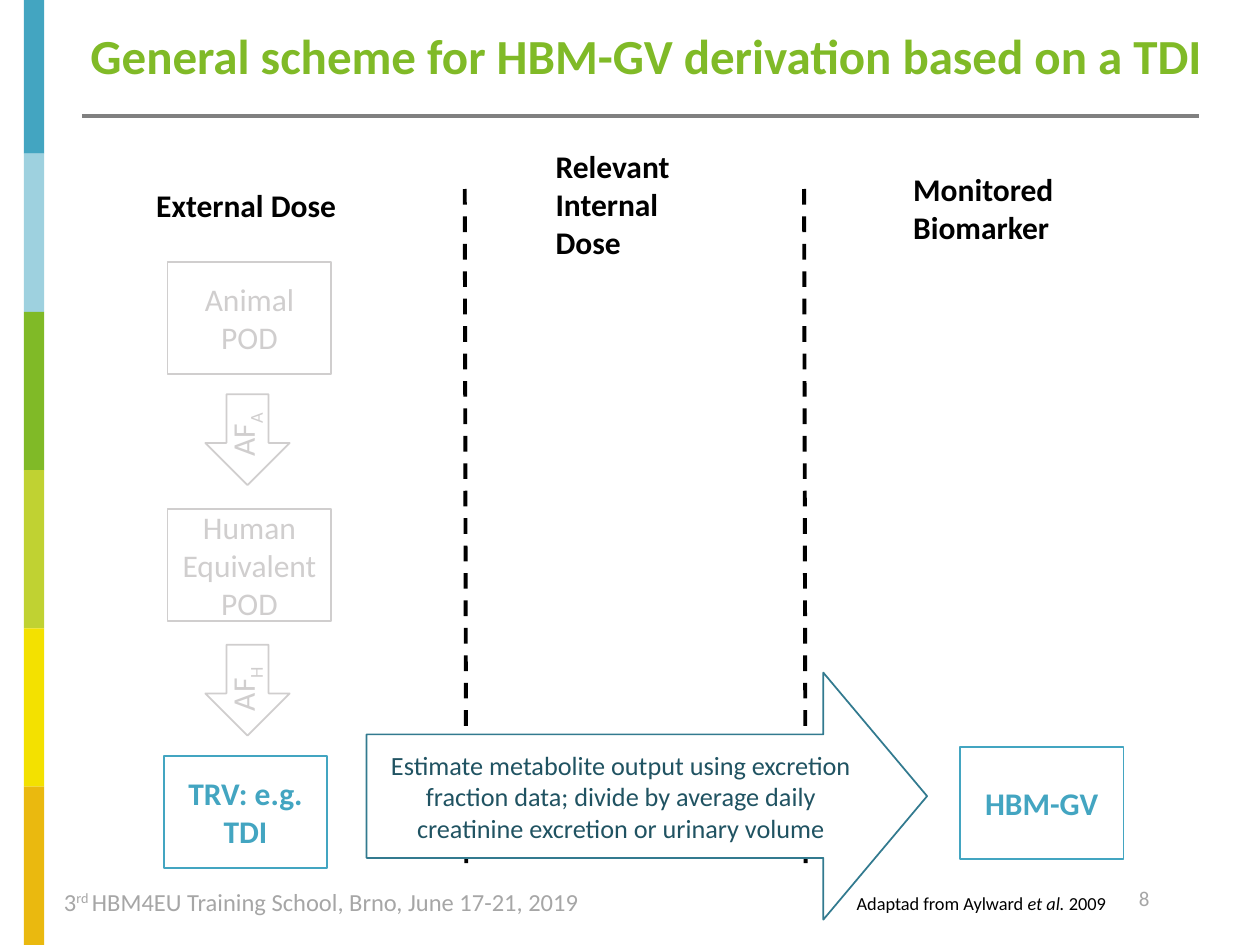
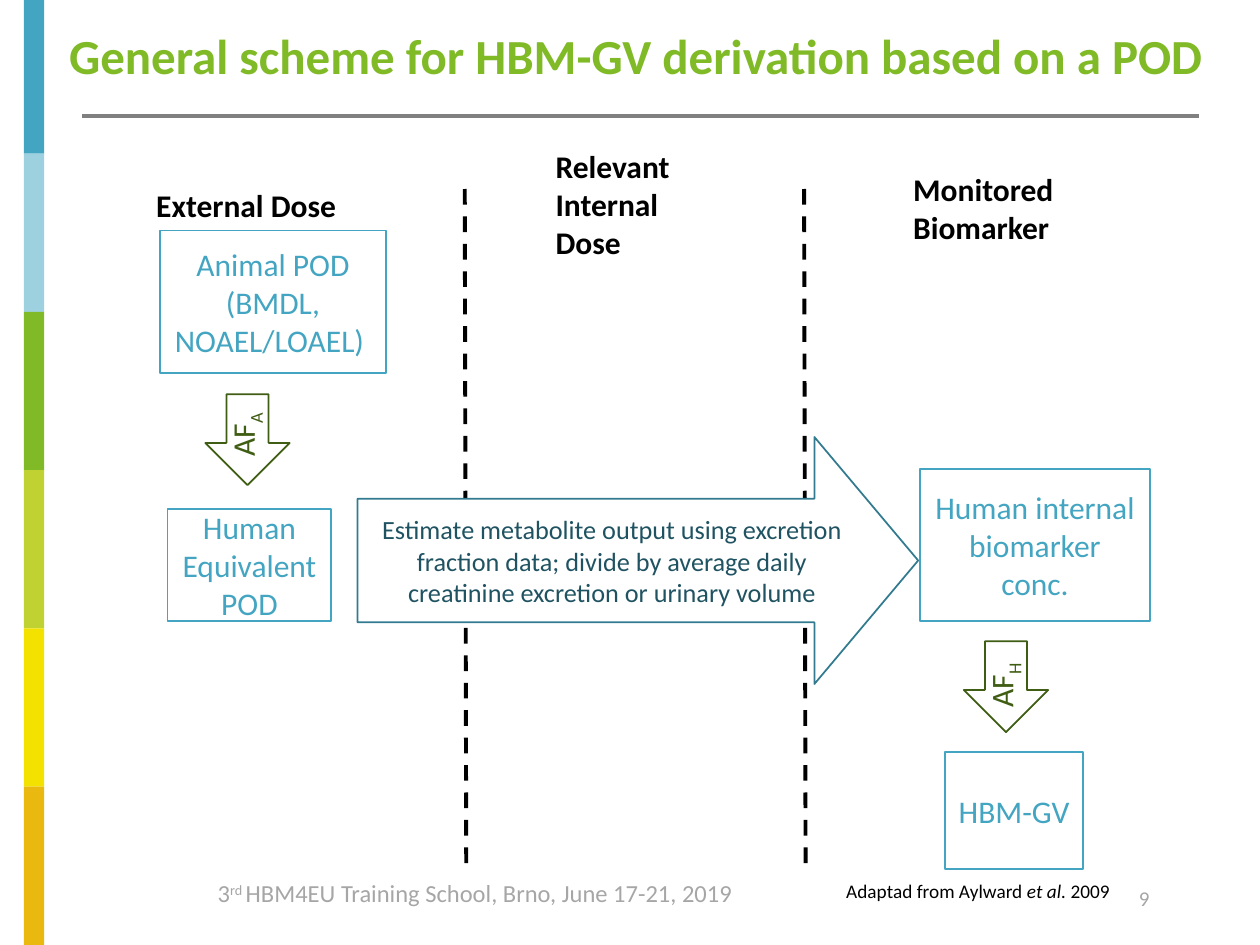
from dataclasses import dataclass
from typing import NamedTuple

from lxml import etree
from pptx import Presentation
from pptx import util as u
from pptx.dml.color import RGBColor
from pptx.enum import dml, shapes, text
from pptx.oxml import ns


@dataclass(frozen=True)
class Theme:
    font: str = "Calibri"
    blue: str = "43A5C1"
    green: str = "80BA27"
    dark_green: str = "405D14"
    faded: str = "D0CECE"
    rule: str = "808080"
    footer: str = "A6A6A6"
    black: str = "000000"
    white: str = "FFFFFF"
    arrow_line: str = "327A8F"
    arrow_text: str = "205362"
    stripes: tuple[str, ...] = ("43A5C1", "9ED1DF", "80BA27", "C0D232", "F3E100", "EAB90F")
    title_size: float = 28
    body_size: float = 18
    arrow_size: float = 15
    footer_size: float = 14
    number_size: float = 12


THEME = Theme()


class Box(NamedTuple):
    """Left, top, width and height in centimetres."""
    left: float
    top: float
    width: float
    height: float

    def lengths(self) -> list[u.Length]:
        return [u.Cm(value) for value in self]


class Run(NamedTuple):
    text: str
    italic: bool = False
    baseline: int = 0


class Step(NamedTuple):
    text: str
    box: Box
    color: str = THEME.blue
    bold: bool = False


class Factor(NamedTuple):
    """A down arrow carrying an assessment factor."""
    subscript: str
    left: float
    top: float
    label_width: float
    color: str


class Scheme(NamedTuple):
    number: int
    title: str
    title_left: float
    footer: Box
    source: Box
    source_size: float
    steps: list[Step]
    factors: list[Factor]
    estimate: Box


FOOTER = [Run("3"), Run("rd ", baseline=30), Run("HBM4EU Training School, Brno, June 17-21, 2019")]
SOURCE = [Run("Adaptad from Aylward "), Run("et al. ", italic=True), Run("2009")]
ESTIMATE = ("Estimate metabolite output using excretion fraction data; divide by "
            "average daily creatinine excretion or urinary volume")
HEADINGS = [
    (["External Dose"], Box(2.9, 3.63, 4.17, 1.02)),
    (["Relevant Internal", "Dose"], Box(10.95, 2.84, 4.17, 2.57)),
    (["Monitored Biomarker"], Box(18.16, 3.3, 4.17, 1.8)),
]
HUMAN_BOX = Box(3.38, 10.26, 3.3, 2.26)

SCHEMES = [
    Scheme(
        8, "General scheme for HBM-GV derivation based on a TDI", 1.57,
        Box(1.04, 17.75, 20.68, 0.86), Box(17.02, 17.86, 6.38, 0.74), 10.5,
        [Step("Human Equivalent POD", HUMAN_BOX, THEME.faded),
         Step("Animal POD", HUMAN_BOX._replace(top=5.28), THEME.faded),
         Step("HBM-GV", HUMAN_BOX._replace(left=19.35, top=15.06), bold=True),
         Step("TRV: e.g. TDI", HUMAN_BOX._replace(left=3.3, top=15.24), bold=True)],
        [Factor("A", 4.14, 7.95, 1.4, THEME.faded),
         Factor("H", 4.14, 13.0, 1.57, THEME.faded)],
        Box(7.39, 13.56, 11.3, 4.98)),
    Scheme(
        9, "General scheme for HBM-GV derivation based on a POD", 1.14,
        Box(4.14, 17.58, 11.73, 0.86), Box(16.81, 17.6, 6.38, 0.74), 11,
        [Step("Human Equivalent POD", HUMAN_BOX),
         Step("Animal POD (BMDL,\nNOAEL/LOAEL) ", Box(3.23, 4.65, 4.55, 2.87)),
         Step("HBM-GV", Box(19.05, 15.16, 2.79, 2.36)),
         Step("Human internal biomarker conc.", Box(18.54, 9.45, 4.65, 3.07))],
        [Factor("A", 4.14, 7.95, 1.4, THEME.dark_green),
         Factor("H", 19.43, 12.93, 1.57, THEME.dark_green)],
        Box(7.21, 8.81, 11.3, 4.98)),
]


def write_text(frame, *paragraphs: str | list[Run], size: float = THEME.body_size,
               color: str = THEME.black, bold: bool = False,
               align=text.PP_ALIGN.LEFT, anchor=text.MSO_ANCHOR.TOP) -> None:
    """Fill a text frame; a newline in a run becomes a line break."""
    frame.word_wrap = True
    frame.auto_size = text.MSO_AUTO_SIZE.NONE
    frame.vertical_anchor = anchor
    for index, content in enumerate(paragraphs):
        paragraph = frame.add_paragraph() if index else frame.paragraphs[0]
        paragraph.alignment = align
        for part in [Run(content)] if isinstance(content, str) else content:
            for line_index, line in enumerate(part.text.split("\n")):
                if line_index:
                    paragraph.add_line_break()
                run = paragraph.add_run()
                run.text = line
                font = run.font
                font.name, font.size = THEME.font, u.Pt(size)
                font.bold, font.italic = bold, part.italic
                font.color.rgb = RGBColor.from_string(color)
                if part.baseline:
                    run._r.get_or_add_rPr().set("baseline", str(part.baseline * 1000))


def add_text(slide, box: Box, *paragraphs: str | list[Run], **style):
    shape = slide.shapes.add_textbox(*box.lengths())
    write_text(shape.text_frame, *paragraphs, **style)
    return shape


def add_preset(slide, kind, box: Box, fill: str | None = None, line: str | None = None):
    shape = slide.shapes.add_shape(kind, *box.lengths())
    shape.shadow.inherit = False
    if fill:
        shape.fill.solid()
        shape.fill.fore_color.rgb = RGBColor.from_string(fill)
    else:
        shape.fill.background()
    if line:
        shape.line.color.rgb = RGBColor.from_string(line)
        shape.line.width = u.Pt(1)
    else:
        shape.line.fill.background()
    return shape


def add_line(slide, start: tuple[float, float], end: tuple[float, float],
             color: str, width: float, dash=None) -> None:
    connector = slide.shapes.add_connector(
        shapes.MSO_CONNECTOR.STRAIGHT, *(u.Cm(value) for value in start + end))
    connector.line.color.rgb = RGBColor.from_string(color)
    connector.line.width = u.Pt(width)
    if dash:
        connector.line.dash_style = dash
    etree.SubElement(connector._element.spPr, ns.qn("a:effectLst"))


def add_frame(slide, scheme: Scheme) -> None:
    """Draw the side band, title, rule and footers."""
    step, overlap = 3.19, 0.09
    for index, color in enumerate(THEME.stripes):
        top = max(0, index * step - overlap)
        bottom = (index + 1) * step - overlap
        add_preset(slide, shapes.MSO_SHAPE.RECTANGLE, Box(0.48, top, 0.41, bottom - top), fill=color)
    add_line(slide, (1.65, 2.34), (24.18, 2.34), THEME.rule, 2)

    title = slide.shapes.title
    box = Box(scheme.title_left, 0.38, 25.4 - scheme.title_left, 1.45)
    title.left, title.top, title.width, title.height = box.lengths()
    write_text(title.text_frame, scheme.title, size=THEME.title_size, color=THEME.green, bold=True)

    add_text(slide, Box(22.71, 17.73, 1.4, 1.02), str(scheme.number),
             size=THEME.number_size, color=THEME.footer)
    add_text(slide, scheme.footer, FOOTER, size=THEME.footer_size, color=THEME.footer)
    add_text(slide, scheme.source, SOURCE, size=scheme.source_size)


def add_columns(slide) -> None:
    for lines, box in HEADINGS:
        add_text(slide, box, *lines, bold=True)
    for left in (9.37, 16.21):
        add_line(slide, (left, 3.81), (left + 0.03, 17.58), THEME.black, 2.25,
                 dml.MSO_LINE.DASH)


def add_step(slide, step: Step) -> None:
    shape = add_preset(slide, shapes.MSO_SHAPE.RECTANGLE, step.box, line=step.color)
    write_text(shape.text_frame, step.text, color=step.color, bold=step.bold,
               align=text.PP_ALIGN.CENTER, anchor=text.MSO_ANCHOR.MIDDLE)


def add_factor(slide, factor: Factor) -> None:
    add_preset(slide, shapes.MSO_SHAPE.DOWN_ARROW,
               Box(factor.left, factor.top, 1.7, 1.83), line=factor.color)
    label_box = Box(factor.left + 0.75 - factor.label_width / 2, factor.top + 0.29,
                    factor.label_width, 1.02)
    label = add_text(slide, label_box, [Run("AF"), Run(factor.subscript, baseline=-25)],
                     color=factor.color)
    label.text_frame.margin_right = 0
    label.rotation = 270


def add_estimate(slide, box: Box) -> None:
    arrow = add_preset(slide, shapes.MSO_SHAPE.RIGHT_ARROW, box,
                       fill=THEME.white, line=THEME.arrow_line)
    arrow.adjustments[0] = 0.5
    arrow.adjustments[1] = 0.42
    write_text(arrow.text_frame, ESTIMATE, size=THEME.arrow_size, color=THEME.arrow_text,
               align=text.PP_ALIGN.CENTER, anchor=text.MSO_ANCHOR.MIDDLE)


def main() -> None:
    presentation = Presentation()
    presentation.slide_width, presentation.slide_height = u.Cm(25.4), u.Cm(19.05)
    title_only = presentation.slide_layouts.get_by_name("Title Only")
    for scheme in SCHEMES:
        slide = presentation.slides.add_slide(title_only)
        add_frame(slide, scheme)
        add_columns(slide)
        for factor in scheme.factors:
            add_factor(slide, factor)
        for step in scheme.steps:
            add_step(slide, step)
        add_estimate(slide, scheme.estimate)
    presentation.save("out.pptx")


if __name__ == "__main__":
    main()
